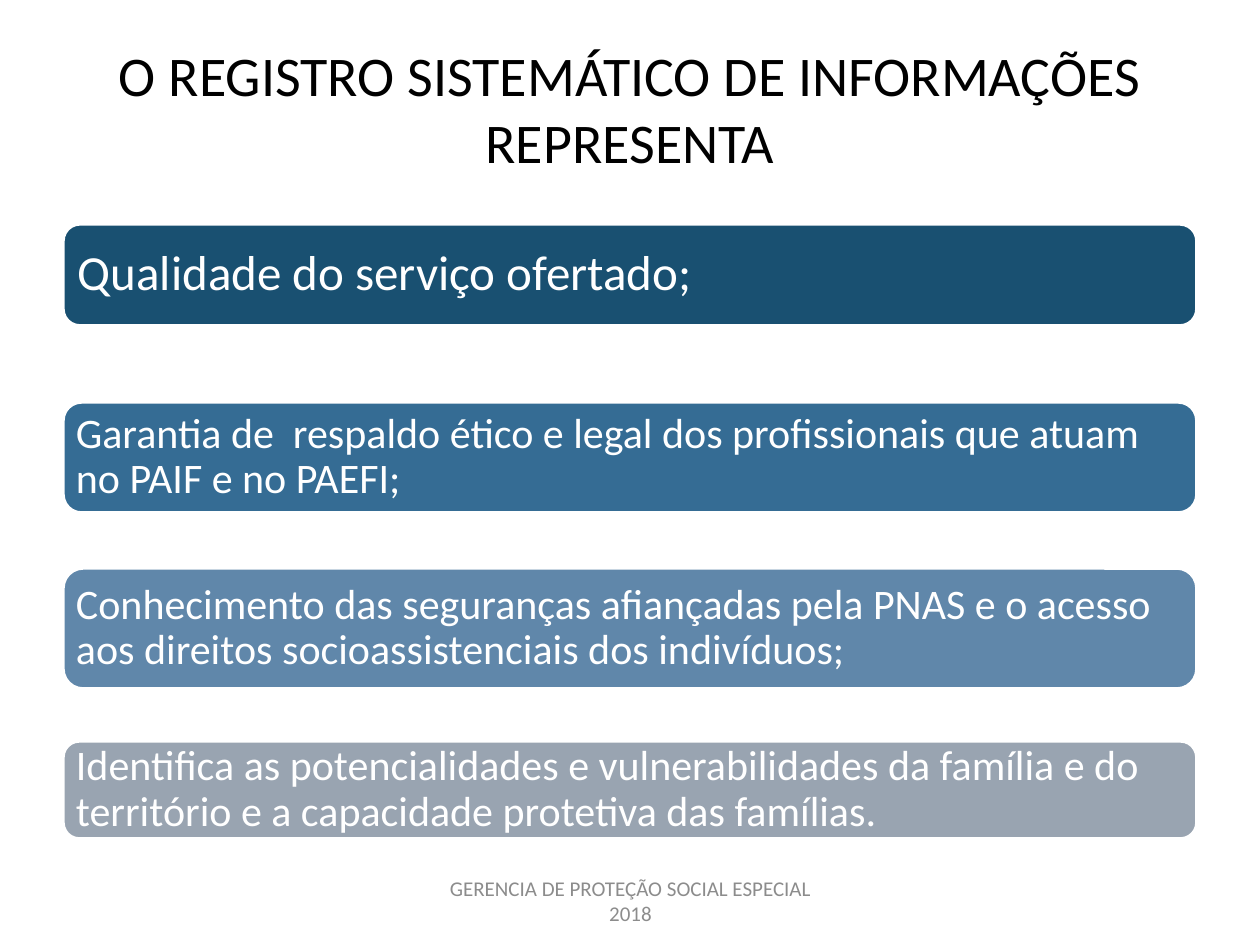
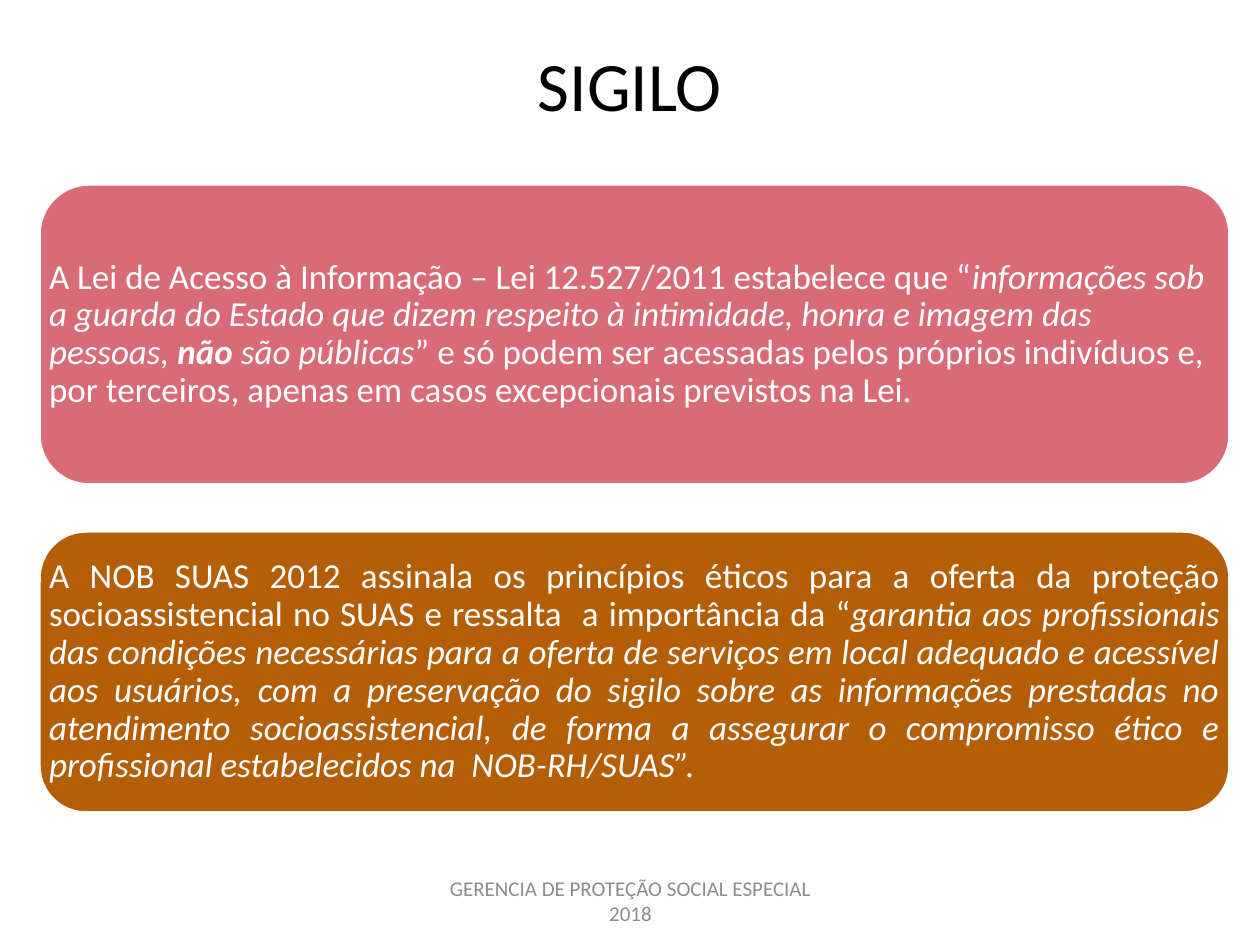
from pptx import Presentation
from pptx.dml.color import RGBColor
from pptx.enum.shapes import MSO_SHAPE
from pptx.enum.text import MSO_ANCHOR, MSO_AUTO_SIZE, PP_ALIGN
from pptx.util import Pt

ROUND = MSO_SHAPE.ROUNDED_RECTANGLE
MIDDLE = MSO_ANCHOR.MIDDLE
NO_FIT = MSO_AUTO_SIZE.NONE
LEFT, CENTER, JUSTIFY = PP_ALIGN.LEFT, PP_ALIGN.CENTER, PP_ALIGN.JUSTIFY

PX = 914400 // 126
WIDE, HIGH = 1260, 945
FONT = "Calibri"
TITLE_ONLY = 5
COLORS = {
    "black": "000000",
    "white": "FFFFFF",
    "gray": "8C8C8C",
    "navy": "195071",
    "blue": "356C94",
    "steel": "6087AA",
    "slate": "99A4B1",
    "rose": "D96B77",
    "amber": "B45F07",
}
FOOTER = "GERENCIA DE PROTEÇÃO SOCIAL ESPECIAL 2018"

# Cards: top, height, colour, text size, inset, alignment, runs (text, style)
BENEFITS = [
    (224, 102, "navy", 28, 15, LEFT, [("Qualidade do serviço ofertado;", "")]),
    (402, 111, "blue", 24, 13, LEFT, [
        ("Garantia de  respaldo ético e legal dos profissionais que atuam "
         "no PAIF e no PAEFI;", "")]),
    (568, 121, "steel", 24, 13, LEFT, [
        ("Conhecimento das seguranças afiançadas pela PNAS e o acesso aos "
         "direitos socioassistenciais dos indivíduos;", "")]),
    (741, 98, "slate", 24, 13, LEFT, [
        ("Identifica as potencialidades e vulnerabilidades da família e do "
         "território e a capacidade protetiva das famílias.", "")]),
]
SECRECY = [
    (184, 301, "rose", 20, 10, LEFT, [
        ("A Lei de Acesso à Informação – Lei 12.527/2011 estabelece que “", ""),
        ("informações sob a guarda do Estado que dizem respeito à "
         "intimidade, honra e imagem das pessoas, ", "i"),
        ("não ", "bi"),
        ("são públicas", "i"),
        ("” e só podem ser acessadas pelos próprios indivíduos e, por "
         "terceiros, apenas em casos excepcionais previstos na Lei.", "")]),
    (531, 282, "amber", 20, 10, JUSTIFY, [
        ("A NOB SUAS 2012 assinala os princípios éticos para a oferta da "
         "proteção socioassistencial no SUAS e ressalta  a importância "
         "da “", ""),
        ("garantia aos profissionais das condições necessárias para a "
         "oferta de serviços em local adequado e acessível aos usuários, "
         "com a preservação do sigilo sobre as informações prestadas no "
         "atendimento socioassistencial, de forma a assegurar o "
         "compromisso ético e profissional estabelecidos na  "
         "NOB-RH/SUAS”.", "i")]),
]


def color(name):
    return RGBColor.from_string(COLORS[name])


def emu(box):
    return [v * PX for v in box]


def write(frame, runs, size, ink, align, inset=None, lead=None):
    """Fill a text frame with one paragraph of styled runs."""
    frame.word_wrap = True
    frame.auto_size = NO_FIT
    frame.vertical_anchor = MIDDLE
    if inset is not None:
        frame.margin_left = frame.margin_right = inset * PX
        frame.margin_top = frame.margin_bottom = inset * PX
    para = frame.paragraphs[0]
    para.alignment = align
    if lead:
        para.line_spacing = lead
    for text, style in runs:
        run = para.add_run()
        run.text = text
        font = run.font
        font.name, font.size = FONT, Pt(size)
        font.bold, font.italic = "b" in style, "i" in style
        font.color.rgb = color(ink)


def add_title(slide, text, size, box):
    title = slide.shapes.title
    title.left, title.top, title.width, title.height = emu(box)
    write(title.text_frame, [(text, "")], size, "black", CENTER)


def add_card(slide, box, fill, size, inset, align, runs):
    """Draw a rounded panel with its text laid over the full box."""
    panel = slide.shapes.add_shape(ROUND, *emu(box))
    panel.shadow.inherit = False
    panel.fill.solid()
    panel.fill.fore_color.rgb = color(fill)
    panel.line.color.rgb = color("white")
    panel.line.width = Pt(2)
    label = slide.shapes.add_textbox(*emu(box))
    write(label.text_frame, runs, size, "white", align, inset, 0.9)


def add_footer(slide, box=(431, 876, 399, 50)):
    foot = slide.shapes.add_textbox(*emu(box))
    write(foot.text_frame, [(FOOTER, "")], 12, "gray", CENTER)


def add_page(deck, title, size, high, left, width, cards):
    slide = deck.slides.add_slide(deck.slide_layouts[TITLE_ONLY])
    add_title(slide, title, size, (63, 38, 1134, high))
    for top, tall, *look in cards:
        add_card(slide, (left, top, width, tall), *look)
    add_footer(slide)


def main():
    deck = Presentation()
    deck.slide_width, deck.slide_height = emu((WIDE, HIGH))
    add_page(deck, "O REGISTRO SISTEMÁTICO DE INFORMAÇÕES REPRESENTA",
             32, 140, 63, 1134, BENEFITS)
    add_page(deck, "SIGILO", 39.6, 91, 39, 1191, SECRECY)
    deck.save("out.pptx")


if __name__ == "__main__":
    main()
